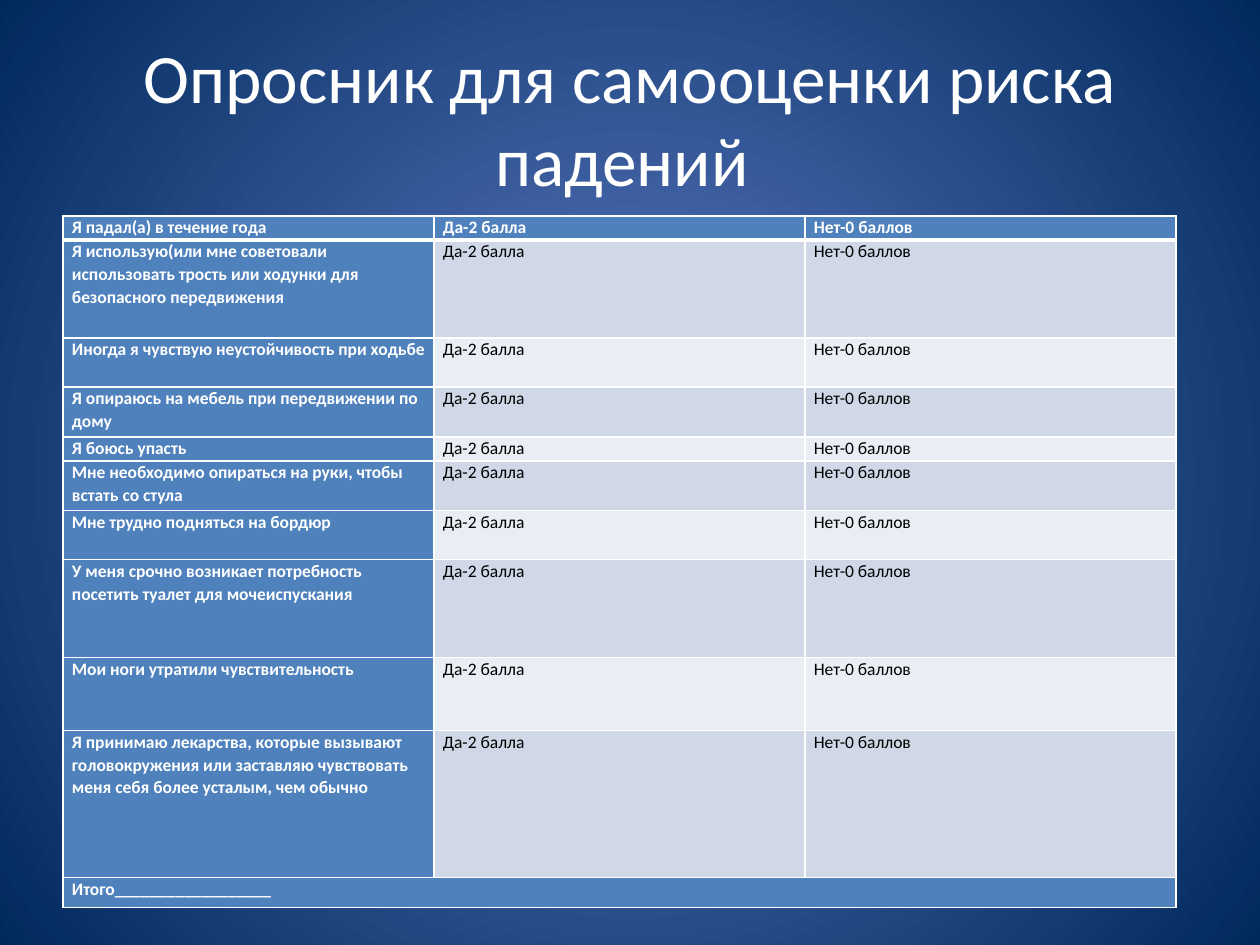
from lxml import etree
from pptx import Presentation
from pptx import util as u
from pptx.dml.color import RGBColor
from pptx.enum import text
from pptx.oxml.ns import qn

PX = 914400 // 126
FONT = "Calibri"
WHITE, BLACK, BLUE = "FFFFFF", "000000", "4F81BD"
BANDS = ("D0D8E8", "E9EDF4")
YES, NO = "Да-2 балла", "Нет-0 баллов"
TOTAL = "Итого__________________"
# Question and row height in px
QUESTIONS = [
    ("Я падал(а) в течение года", 24),
    ("Я использую(или мне советовали использовать трость или ходунки "
     "для безопасного передвижения", 98),
    ("Иногда я чувствую неустойчивость при ходьбе", 49),
    ("Я опираюсь на мебель при передвижении по дому", 50),
    ("Я боюсь упасть", 24),
    ("Мне необходимо опираться на руки, чтобы встать со стула", 50),
    ("Мне трудно подняться на бордюр", 49),
    ("У меня срочно возникает потребность посетить туалет "
     "для мочеиспускания", 98),
    ("Мои ноги утратили чувствительность", 73),
    ("Я принимаю лекарства, которые вызывают головокружения или заставляю "
     "чувствовать меня себя более усталым, чем обычно", 147),
]
TOTAL_HEIGHT = 30


def px(n):
    return u.Emu(n * PX)


def rgb(color):
    return RGBColor.from_string(color)


def add_run(p, words, size, color, bold=False):
    r = p.add_run()
    r.text = words
    r.font.name, r.font.size, r.font.bold = FONT, u.Pt(size), bold
    r.font.color.rgb = rgb(color)


def set_background(s, center, edge):
    """Fill the slide with a gradient that spreads from its middle."""
    fill = s.background.fill
    fill.gradient()
    for stop, color in zip(fill.gradient_stops, (center, edge)):
        stop.color.rgb = rgb(color)
    lin = next(s.background._cSld.iter(qn("a:lin")))
    circle = etree.Element(qn("a:path"), path="circle")
    etree.SubElement(circle, qn("a:fillToRect"),
                     {side: "50000" for side in "ltrb"})
    lin.getparent().replace(lin, circle)


def add_title(s, left, top, width, height):
    sp = s.shapes.title
    sp.left, sp.top, sp.width, sp.height = map(px, (left, top, width, height))
    tf = sp.text_frame
    tf.word_wrap = True
    tf.auto_size = text.MSO_AUTO_SIZE.NONE
    tf.vertical_anchor = text.MSO_ANCHOR.MIDDLE
    p = tf.paragraphs[0]
    p.alignment = text.PP_ALIGN.CENTER
    add_run(p, "Опросник для самооценки риска падений ", 39.6, WHITE)


def set_borders(cell, **widths):
    """Draw white borders; widths in points by side, 1 if not given."""
    tc_pr = cell._tc.get_or_add_tcPr()
    for i, side in enumerate("LRTB"):
        ln = etree.Element(qn("a:ln" + side), w=str(u.Pt(widths.get(side, 1))))
        solid = etree.SubElement(ln, qn("a:solidFill"))
        etree.SubElement(solid, qn("a:srgbClr"), val=WHITE)
        tc_pr.insert(i, ln)


def fill_cell(cell, words, fill, color, bold):
    cell.margin_left = cell.margin_right = px(9)
    cell.margin_top = cell.margin_bottom = 0
    cell.fill.solid()
    cell.fill.fore_color.rgb = rgb(fill)
    p = cell.text_frame.paragraphs[0]
    p.line_spacing = 1.07
    if words:
        add_run(p, words, 10, color, bold)


def add_questionnaire(s, left, top, width):
    rows = [(q, YES, NO) for q, _ in QUESTIONS] + [(TOTAL, "", "")]
    heights = [h for _, h in QUESTIONS] + [TOTAL_HEIGHT]
    last = len(rows) - 1
    table = s.shapes.add_table(len(rows), 3, px(left), px(top), px(width),
                               px(sum(heights))).table
    table.first_col = True
    for col in table.columns:
        col.width = px(width) // 3
    for i, (row, height) in enumerate(zip(rows, heights)):
        table.rows[i].height = px(height)
        for j, words in enumerate(row):
            cell = table.cell(i, j)
            if j == 0 or i in (0, last):
                fill_cell(cell, words, BLUE, WHITE, True)
            else:
                fill_cell(cell, words, BANDS[(i - 1) % 2], BLACK, False)
            set_borders(cell, T=3 if i == 1 else 1, B=3 if i == 0 else 1)
    table.cell(last, 0).merge(table.cell(last, 2))


def main():
    prs = Presentation()
    prs.slide_width, prs.slide_height = px(1260), px(945)
    s = prs.slides.add_slide(prs.slide_layouts[5])
    set_background(s, "5E7CC5", "00295C")
    add_title(s, 63, 38, 1134, 158)
    add_questionnaire(s, 63, 216, 1113)
    prs.save("out.pptx")


if __name__ == "__main__":
    main()
